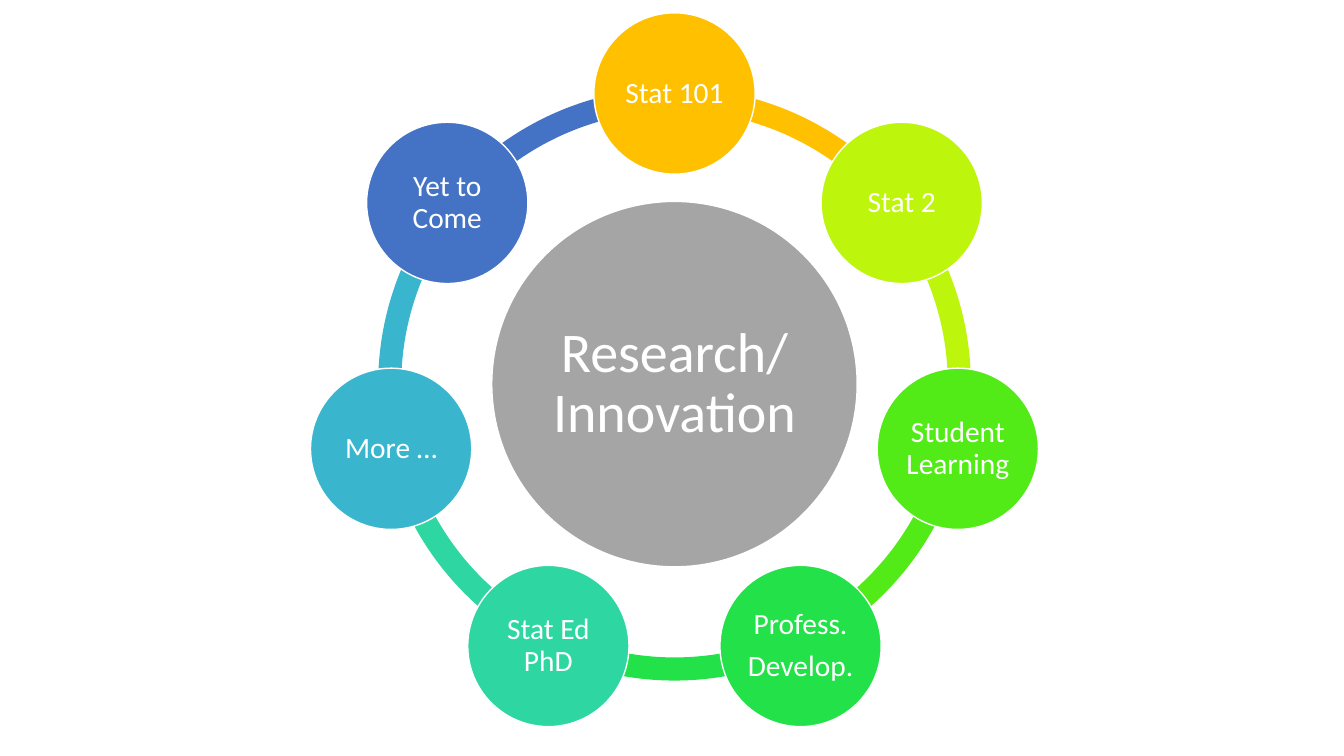
from math import cos, radians, sin

from pptx import Presentation
from pptx.dml.color import RGBColor
from pptx.enum.shapes import MSO_SHAPE
from pptx.enum.text import MSO_ANCHOR, PP_ALIGN
from pptx.util import Pt

HUB = ("Research/\vInnovation", "A5A5A5")
TOPICS = [
    ("Stat 101", "FFC000"),
    ("Stat 2", "BEF50C"),
    ("Student Learning", "53EB17"),
    ("Profess.\nDevelop.", "23E148"),
    ("Stat Ed PhD", "2ED7A1"),
    ("More …", "39B6CE"),
    ("Yet to Come", "4472C4"),
]

CENTER_X, CENTER_Y = 481.8, 274.4
ORBIT = 207.6
RING_SIZE = 423.4
RING_THICKNESS = 0.039
HUB_SIZE = 261
TOPIC_SIZE = 115.2
ARC_UNITS_PER_DEGREE = 0.6
STEP = 360 / len(TOPICS)


def color(value):
    return RGBColor.from_string(value)


def add_round(page, kind, x, y, size, fill):
    shape = page.shapes.add_shape(
        kind, Pt(x - size / 2), Pt(y - size / 2), Pt(size), Pt(size)
    )
    shape.shadow.inherit = False
    shape.fill.solid()
    shape.fill.fore_color.rgb = color(fill)
    return shape


def add_arc(page, start, fill):
    arc = add_round(page, MSO_SHAPE.BLOCK_ARC, CENTER_X, CENTER_Y, RING_SIZE, fill)
    arc.line.fill.background()
    arc.adjustments[0] = start % 360 * ARC_UNITS_PER_DEGREE
    arc.adjustments[1] = (start + STEP) % 360 * ARC_UNITS_PER_DEGREE
    arc.adjustments[2] = RING_THICKNESS


def add_circle(page, text, fill, x, y, size, font_size, inset):
    circle = add_round(page, MSO_SHAPE.OVAL, x, y, size, fill)
    circle.line.color.rgb = color("FFFFFF")
    circle.line.width = Pt(1)
    frame = circle.text_frame
    frame.word_wrap = True
    frame.vertical_anchor = MSO_ANCHOR.MIDDLE
    frame.margin_left = frame.margin_right = Pt(inset)
    frame.margin_top = frame.margin_bottom = Pt(inset)
    frame.text = text
    for para in frame.paragraphs:
        para.alignment = PP_ALIGN.CENTER
        para.line_spacing = 0.9
        para.space_after = Pt(font_size * 0.35)
        for span in para.runs:
            span.font.name = "Calibri"
            span.font.size = Pt(font_size)
            span.font.color.rgb = color("FFFFFF")


def main():
    deck = Presentation()
    deck.slide_width, deck.slide_height = Pt(960), Pt(540)
    page = deck.slides.add_slide(deck.slide_layouts[6])

    angles = [index * STEP - 90 for index in range(len(TOPICS))]
    for angle, (_, fill) in zip(angles, TOPICS):
        add_arc(page, angle, fill)

    add_circle(page, *HUB, CENTER_X, CENTER_Y, HUB_SIZE, 40, 4)
    for angle, (text, fill) in zip(angles, TOPICS):
        x = CENTER_X + ORBIT * cos(radians(angle))
        y = CENTER_Y + ORBIT * sin(radians(angle))
        add_circle(page, text, fill, x, y, TOPIC_SIZE, 21, 2)

    deck.save("out.pptx")


if __name__ == "__main__":
    main()
